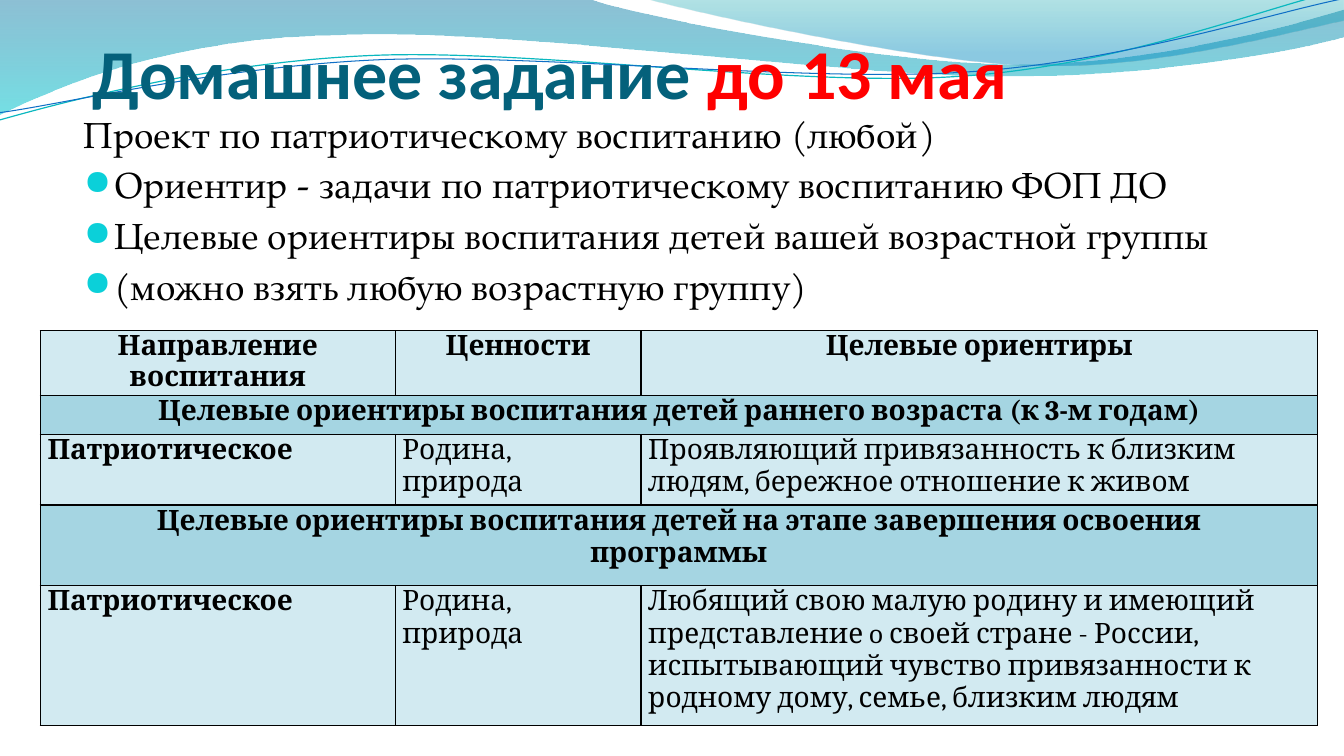
from dataclasses import dataclass
from typing import Optional

import lxml.etree
import pptx
import pptx.dml.color
import pptx.enum.text
import pptx.oxml
import pptx.oxml.ns
import pptx.util

# The slide is a grid of 160 columns by 90 rows of square cells.
CELL = pptx.util.Inches(1 / 12)
COLUMNS, ROWS = 160, 90
PALE, BAND, BLACK = "D2EAF1", "A5D5E2", "000000"
CENTER = pptx.enum.text.PP_ALIGN.CENTER
MIDDLE = pptx.enum.text.MSO_ANCHOR.MIDDLE
qn = pptx.oxml.ns.qn
NS = pptx.oxml.ns.nsdecls("a")

Point = tuple[float, float]
Stops = tuple[tuple[int, str, int], ...]


@dataclass
class Wave:
    """A segment of two numbers is a line, one of six is a cubic curve."""
    start: Point
    segments: list[tuple[float, ...]]
    stops: Optional[Stops] = None
    line: str = ""
    width: float = 0


@dataclass
class TableRow:
    height: float
    cells: list[str]
    heading: bool = False
    spacing: Optional[float] = None


WAVES = [
    Wave((0, 0), [
        (70.4, -0.1), (76.1, 2, 106.2, 7.6, 121.3, 7.6),
        (136.6, 7.6, 153.4, 3.1, 160, 1.1), (160.2, 4.3),
        (157.3, 5.3, 139.2, 9.1, 119.3, 9), (99.5, 9, 61.1, 3.4, 41.2, 4.1),
        (20.6, 4.3, 7.3, 10, -0.1, 13.6), (0, 0),
    ], stops=((0, "0074A1", 45), (100, "00C6CF", 55))),
    Wave((76.7, -0.1), [
        (81.5, 1.3, 109.1, 7.4, 123, 7.8),
        (136.9, 8.3, 153.8, 3.8, 160, 2.5), (160, 0), (76.7, -0.1),
    ], stops=((0, "00A1A9", 30), (80, "008BBF", 45))),
    Wave((-0.1, 14.3), [
        (7.7, 12.1, 25.3, 7.4, 44.3, 6.6), (63.2, 5.8, 94.8, 10.4, 114, 9.1),
        (133.2, 7.9, 150.2, 1, 159.7, -1.2),
    ], line="0AB8BF", width=0.85),
    Wave((0, 13.4), [
        (7.6, 12.4, 26.2, 7.9, 45.4, 7.1), (64.4, 6.4, 95.5, 9.8, 114.6, 8.6),
        (133.8, 7.4, 150.6, 1.7, 160.1, -0.2),
    ], line="0F6FC6", width=0.75),
]

TASKS = [
    "Проект по патриотическому воспитанию (любой)",
    "Ориентир - задачи по патриотическому воспитанию ФОП ДО",
    "Целевые ориентиры воспитания детей вашей возрастной группы",
    "(можно взять любую возрастную группу)",
]

COLUMN_WIDTHS = [42.24, 29.28, 80.52]
TABLE_ROWS = [
    TableRow(7.32, ["Направление воспитания", "Ценности", "Целевые ориентиры"], True, 0.96),
    TableRow(4.68, ["Целевые ориентиры воспитания детей раннего возраста (к 3-м годам)"], True),
    TableRow(8.4, ["Патриотическое", "Родина, природа",
                   "Проявляющий привязанность к близким людям, бережное отношение к живом"]),
    TableRow(9.6, ["Целевые ориентиры воспитания детей на этапе завершения освоения\n"
                   "программы"], True),
    TableRow(16.68, ["Патриотическое", "Родина, природа",
                     "Любящий свою малую родину и имеющий\n"
                     "представление o своей стране - России,\n"
                     "испытывающий чувство привязанности к\n"
                     "родному дому, семье, близким людям"]),
]


def grid(cells: float) -> int:
    return round(cells * CELL)


def rgb(color: str) -> pptx.dml.color.RGBColor:
    return pptx.dml.color.RGBColor.from_string(color)


def format_run(r, font: str, size: float, color: str, bold: bool = False) -> None:
    r.font.name, r.font.size, r.font.bold = font, pptx.util.Pt(size), bold
    r.font.color.rgb = rgb(color)


def bend(sp, segments: list[tuple[float, ...]]) -> None:
    """Turn the straight pieces of a freeform into its cubic curves."""
    pieces = sp.element.spPr.findall(".//" + qn("a:lnTo"))
    for piece, segment in zip(pieces, segments):
        if len(segment) == 2:
            continue
        curve = lxml.etree.Element(qn("a:cubicBezTo"))
        for x, y in zip(segment[::2], segment[1::2]):
            lxml.etree.SubElement(curve, qn("a:pt"), x=str(grid(x) - sp.left),
                                  y=str(grid(y) - sp.top))
        piece.getparent().replace(piece, curve)


def gradient(stops: Stops):
    """Return a top-to-bottom gradient with the opacity of each stop in percent."""
    marks = "".join(
        f'<a:gs pos="{pos * 1000}"><a:srgbClr val="{color}">'
        f'<a:alpha val="{alpha * 1000}"/></a:srgbClr></a:gs>'
        for pos, color, alpha in stops)
    return pptx.oxml.parse_xml(
        f'<a:gradFill {NS} rotWithShape="1"><a:gsLst>{marks}</a:gsLst>'
        '<a:lin ang="5400000" scaled="0"/></a:gradFill>')


def draw_wave(s, wave: Wave) -> None:
    builder = s.shapes.build_freeform(grid(wave.start[0]), grid(wave.start[1]))
    builder.add_line_segments([(grid(seg[-2]), grid(seg[-1])) for seg in wave.segments],
                              close=bool(wave.stops))
    sp = builder.convert_to_shape()
    sp.shadow.inherit = False
    bend(sp, wave.segments)
    if wave.stops:
        sp.line.fill.background()
        sp.element.spPr.find(qn("a:custGeom")).addnext(gradient(wave.stops))
    else:
        sp.fill.background()
        sp.line.color.rgb = rgb(wave.line)
        sp.line.width = pptx.util.Pt(wave.width)


def add_text_frame(s, x: float, y: float, width: float, height: float):
    sp = s.shapes.add_textbox(grid(x), grid(y), grid(width), grid(height))
    tf = sp.text_frame
    tf.word_wrap, tf.vertical_anchor = True, MIDDLE
    tf.margin_left = tf.margin_top = tf.margin_right = tf.margin_bottom = 0
    return tf


def draw_title(s) -> None:
    p = add_text_frame(s, 11, 4.8, 138, 17.4).paragraphs[0]
    for text, color in (("Домашнее задание ", "04617B"), ("до 13 мая", "FF0000")):
        r = p.add_run()
        r.text = text
        format_run(r, "Calibri", 50, color, bold=True)
    p.add_line_break()
    lxml.etree.SubElement(p._p, qn("a:endParaRPr"), sz="5000")


def draw_tasks(s) -> None:
    tf = add_text_frame(s, 10, -3.6, 150, 57.1)
    tf.text = "\n".join(TASKS)
    for i, p in enumerate(tf.paragraphs):
        p.space_before = pptx.util.Pt(5)
        format_run(p.runs[0], "TeX Gyre Pagella", 26, BLACK)
        pPr = p._p.get_or_add_pPr()
        pPr.set("marL", str(grid(3.6)))
        pPr.set("indent", str(grid(-3.6)))
        if i == 0:
            lxml.etree.SubElement(pPr, qn("a:buNone"))
            continue
        color = lxml.etree.SubElement(pPr, qn("a:buClr"))
        lxml.etree.SubElement(color, qn("a:srgbClr"), val="0BD0D9")
        lxml.etree.SubElement(pPr, qn("a:buSzPct"), val="95000")
        lxml.etree.SubElement(pPr, qn("a:buFont"), typeface="OpenSymbol")
        lxml.etree.SubElement(pPr, qn("a:buChar"), char="●")


def style_cell(cell, fill: str) -> None:
    tcPr = cell._tc.get_or_add_tcPr()
    for side in "LRTB":
        tcPr.append(pptx.oxml.parse_xml(
            f'<a:ln{side} {NS} w="12700"><a:solidFill><a:srgbClr val="{BLACK}"/>'
            f'</a:solidFill></a:ln{side}>'))
    cell.fill.solid()
    cell.fill.fore_color.rgb = rgb(fill)
    cell.margin_left = cell.margin_right = grid(0.86)
    cell.margin_top = cell.margin_bottom = 0


def draw_table(s) -> None:
    height = sum(row.height for row in TABLE_ROWS)
    table = s.shapes.add_table(len(TABLE_ROWS), len(COLUMN_WIDTHS), grid(4.8), grid(39.36),
                               grid(sum(COLUMN_WIDTHS)), grid(height)).table
    table.first_row = table.horz_banding = False
    for column, width in zip(table.columns, COLUMN_WIDTHS):
        column.width = grid(width)
    for i, row in enumerate(TABLE_ROWS):
        table.rows[i].height = grid(row.height)
        banner = len(row.cells) == 1
        for cell in table.rows[i].cells:
            style_cell(cell, BAND if banner else PALE)
        if banner:
            table.cell(i, 0).merge(table.cell(i, len(COLUMN_WIDTHS) - 1))
        for j, text in enumerate(row.cells):
            tf = table.cell(i, j).text_frame
            tf.text = text
            for p in tf.paragraphs:
                p.line_spacing = row.spacing
                if row.heading:
                    p.alignment = CENTER
                format_run(p.runs[0], "Cambria", 20, BLACK, bold=row.heading or j == 0)


def main() -> None:
    prs = pptx.Presentation()
    prs.slide_width, prs.slide_height = grid(COLUMNS), grid(ROWS)
    s = prs.slides.add_slide(prs.slide_layouts[6])
    for wave in WAVES:
        draw_wave(s, wave)
    draw_title(s)
    draw_tasks(s)
    draw_table(s)
    prs.save("out.pptx")


if __name__ == "__main__":
    main()
